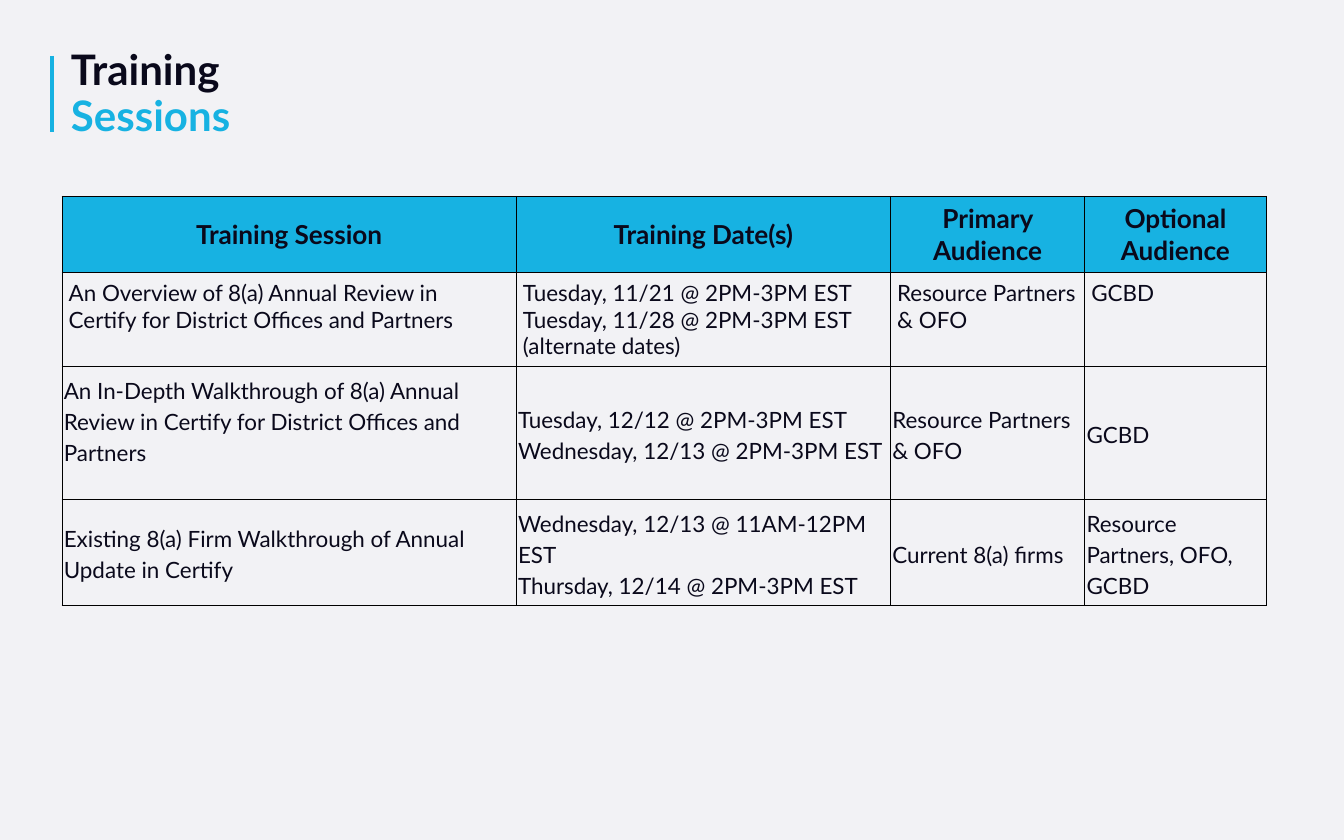
from lxml.etree import SubElement
from pptx import Presentation
from pptx.dml.color import RGBColor
from pptx.enum.shapes import MSO_CONNECTOR
from pptx.enum.text import MSO_ANCHOR, PP_ALIGN
from pptx.oxml.ns import qn
from pptx.util import Pt

FONT = "Lato"
PAPER = RGBColor(0xF2, 0xF2, 0xF5)
INK = RGBColor(0x0A, 0x09, 0x1B)
CYAN = RGBColor(0x17, 0xB2, 0xE2)
BLACK = RGBColor(0, 0, 0)


def add_text(paragraph, text, size, color=INK, bold=False):
    run = paragraph.add_run()
    run.text = text
    run.font.name = FONT
    run.font.size = Pt(size)
    run.font.bold = bold
    run.font.color.rgb = color


def add_borders(cell):
    properties = cell._tc.get_or_add_tcPr()
    for position, side in enumerate(("lnL", "lnR", "lnT", "lnB")):
        line = SubElement(properties, qn(f"a:{side}"), w=str(Pt(1)))
        fill = SubElement(line, qn("a:solidFill"))
        SubElement(fill, qn("a:srgbClr"), val=str(BLACK))
        properties.insert(position, line)  # borders precede the cell fill


presentation = Presentation()
presentation.slide_width = Pt(1440)
presentation.slide_height = Pt(900)
slide = presentation.slides.add_slide(presentation.slide_layouts[6])
slide.background.fill.solid()
slide.background.fill.fore_color.rgb = PAPER

# Title with its accent line
accent = slide.shapes.add_connector(
    MSO_CONNECTOR.STRAIGHT, Pt(55.5), Pt(60), Pt(55.5), Pt(141))
accent.line.color.rgb = CYAN
accent.line.width = Pt(4.5)
SubElement(accent._element.spPr, qn("a:effectLst"))

title = slide.shapes.add_textbox(Pt(69), Pt(49.7), Pt(429), Pt(105)).text_frame
title.word_wrap = True
heading = title.paragraphs[0]
heading.line_spacing = 0.9
add_text(heading, "Training ", 45, INK, True)
heading.add_line_break()
add_text(heading, "Sessions", 45, CYAN, True)

# Table of sessions: each cell is a list of paragraphs
sessions = [
    [["Training Session"], ["Training Date(s)"],
     ["Primary Audience"], ["Optional Audience"]],
    [["An Overview of 8(a) Annual Review in Certify for District Offices and Partners"],
     ["Tuesday, 11/21 @ 2PM-3PM EST", "Tuesday, 11/28 @ 2PM-3PM EST", "(alternate dates)"],
     ["Resource Partners & OFO"], ["GCBD"]],
    [["An In-Depth Walkthrough of 8(a) Annual Review in Certify for District Offices and Partners"],
     ["Tuesday, 12/12 @ 2PM-3PM EST", "Wednesday, 12/13 @ 2PM-3PM EST"],
     ["Resource Partners & OFO"], ["GCBD"]],
    [["Existing 8(a) Firm Walkthrough of Annual Update in Certify"],
     ["Wednesday, 12/13 @ 11AM-12PM EST", "Thursday, 12/14 @ 2PM-3PM EST"],
     ["Current 8(a) firms"], ["Resource Partners, OFO, GCBD"]],
]
column_widths = [486.7, 401, 208.1, 194.4]
row_heights = [81.5, 100.7, 142.5, 113.5]

schedule = slide.shapes.add_table(
    len(row_heights), len(column_widths), Pt(66.4), Pt(210.2),
    Pt(sum(column_widths)), Pt(sum(row_heights))).table
schedule.horz_banding = False
for column, width in zip(schedule.columns, column_widths):
    column.width = Pt(width)
for row, height in zip(schedule.rows, row_heights):
    row.height = Pt(height)

for r, session in enumerate(sessions):
    is_header = r == 0
    is_loose = r >= 2
    for c, lines in enumerate(session):
        cell = schedule.cell(r, c)
        cell.margin_left = cell.margin_right = Pt(2 if is_loose else 7.2)
        cell.margin_top = cell.margin_bottom = Pt(7.2)
        at_top = r == 1 or (r, c) == (2, 0)
        cell.vertical_anchor = MSO_ANCHOR.TOP if at_top else MSO_ANCHOR.MIDDLE
        if is_header:
            cell.fill.solid()
            cell.fill.fore_color.rgb = CYAN
        else:
            cell.fill.background()
        add_borders(cell)
        for i, line in enumerate(lines):
            frame = cell.text_frame
            paragraph = frame.add_paragraph() if i else frame.paragraphs[0]
            paragraph.alignment = PP_ALIGN.CENTER if is_header else PP_ALIGN.LEFT
            paragraph.line_spacing = 1.15 if is_loose else 1.0
            add_text(paragraph, line, 28 if is_header else 24, bold=is_header)

presentation.save("out.pptx")
